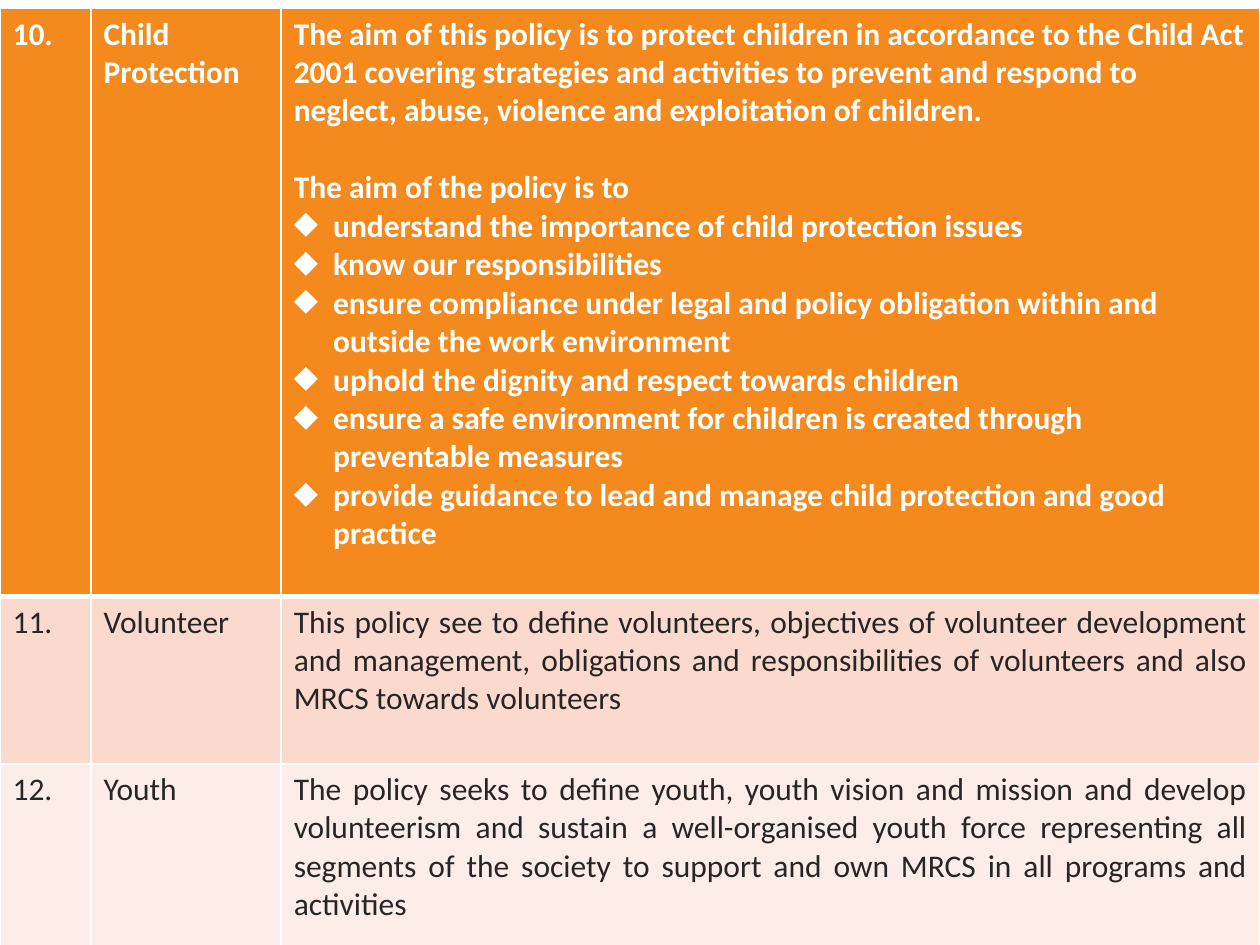
from pptx import Presentation
from pptx.dml.color import RGBColor
from pptx.enum.text import PP_ALIGN
from pptx.oxml.ns import qn
from pptx.util import Pt
from lxml.etree import SubElement

COLUMN_WIDTHS = [52, 108.7, 559.3]
ROW_HEIGHTS = [336, 95.5, 135]
BULLET_INDENT = 22.5
LINE_HEIGHT = 22
HEADER = {"fill": "F4891E", "color": "FFFFFF", "bold": True, "bottom": 3}
FIRST_BAND = {"fill": "FBDACD", "color": "262626", "bold": False, "bottom": 1}
SECOND_BAND = {**FIRST_BAND, "fill": "FDEDE8"}
JUSTIFIED = {"alignment": PP_ALIGN.JUSTIFY}
BULLETED = {"bullet": "◆"}

POLICIES = [
    (HEADER, "10.", "Child Protection", [
        ("The aim of this policy is to protect children in accordance to the Child Act 2001 "
         "covering strategies and activities to prevent and respond to neglect, abuse, "
         "violence and exploitation of children.", {}),
        ("The aim of the policy is to", {"space_before": Pt(LINE_HEIGHT)}),
        ("understand the importance of child protection issues", BULLETED),
        ("know our responsibilities", BULLETED),
        ("ensure compliance under legal and policy obligation within and outside "
         "the work environment", BULLETED),
        ("uphold the dignity and respect towards children", BULLETED),
        ("ensure a safe environment for children is created through preventable measures",
         BULLETED),
        ("provide guidance to lead and manage child protection and good practice", BULLETED),
    ]),
    (FIRST_BAND, "11.", "Volunteer", [
        ("This policy see to define volunteers, objectives of volunteer development and "
         "management, obligations and responsibilities of volunteers and also MRCS towards "
         "volunteers", JUSTIFIED),
    ]),
    (SECOND_BAND, "12.", "Youth", [
        ("The policy seeks to define youth, youth vision and mission and develop volunteerism "
         "and sustain a well-organised youth force representing all segments of the society "
         "to support and own MRCS in all programs and activities", JUSTIFIED),
    ]),
]


def rgb(value):
    """Turn a hex string into a colour."""
    return RGBColor.from_string(value)


def set_values(target, values):
    """Set each named attribute of the target."""
    for name, value in values.items():
        setattr(target, name, value)


def add_bullet(paragraph, symbol):
    """Give a paragraph a hanging bullet."""
    properties = paragraph._p.get_or_add_pPr()
    properties.set("marL", str(Pt(BULLET_INDENT)))
    properties.set("indent", str(-Pt(BULLET_INDENT)))
    SubElement(properties, qn("a:buChar")).set("char", symbol)


def add_borders(cell, bottom):
    """Draw white lines on the four sides of a cell."""
    properties = cell._tc.get_or_add_tcPr()
    for side, width in {"L": 1, "R": 1, "T": 1, "B": bottom}.items():
        line = SubElement(properties, qn(f"a:ln{side}"), w=str(Pt(width)))
        fill = SubElement(line, qn("a:solidFill"))
        SubElement(fill, qn("a:srgbClr"), val="FFFFFF")


def write_paragraph(paragraph, text, layout, style):
    """Write one formatted paragraph."""
    values = dict(layout)
    symbol = values.pop("bullet", None)
    set_values(paragraph, values)
    if symbol:
        add_bullet(paragraph, symbol)
    span = paragraph.add_run()
    span.text = text
    set_values(span.font, {"name": "Calibri", "size": Pt(18), "bold": style["bold"]})
    span.font.color.rgb = rgb(style["color"])


def fill_cell(cell, content, style):
    """Fill a cell with its paragraphs, borders and background."""
    add_borders(cell, style["bottom"])
    cell.fill.solid()
    cell.fill.fore_color.rgb = rgb(style["fill"])
    frame = cell.text_frame
    for index, (text, layout) in enumerate(content):
        paragraph = frame.add_paragraph() if index else frame.paragraphs[0]
        write_paragraph(paragraph, text, layout, style)


def add_policy_table(page):
    """Add the table of policies."""
    table = page.shapes.add_table(
        len(ROW_HEIGHTS), len(COLUMN_WIDTHS), Pt(0), Pt(5),
        Pt(sum(COLUMN_WIDTHS)), Pt(sum(ROW_HEIGHTS))).table
    for column, width in zip(table.columns, COLUMN_WIDTHS):
        column.width = Pt(width)
    for row, height, policy in zip(table.rows, ROW_HEIGHTS, POLICIES):
        row.height = Pt(height)
        style, number, name, aims = policy
        contents = [[(number, {})], [(name, {})], aims]
        for cell, content in zip(row.cells, contents):
            fill_cell(cell, content, style)


def main():
    """Build and save the deck."""
    deck = Presentation()
    set_values(deck, {"slide_width": Pt(720), "slide_height": Pt(540)})
    page = deck.slides.add_slide(deck.slide_layouts[6])
    add_policy_table(page)
    deck.save("out.pptx")


if __name__ == "__main__":
    main()
